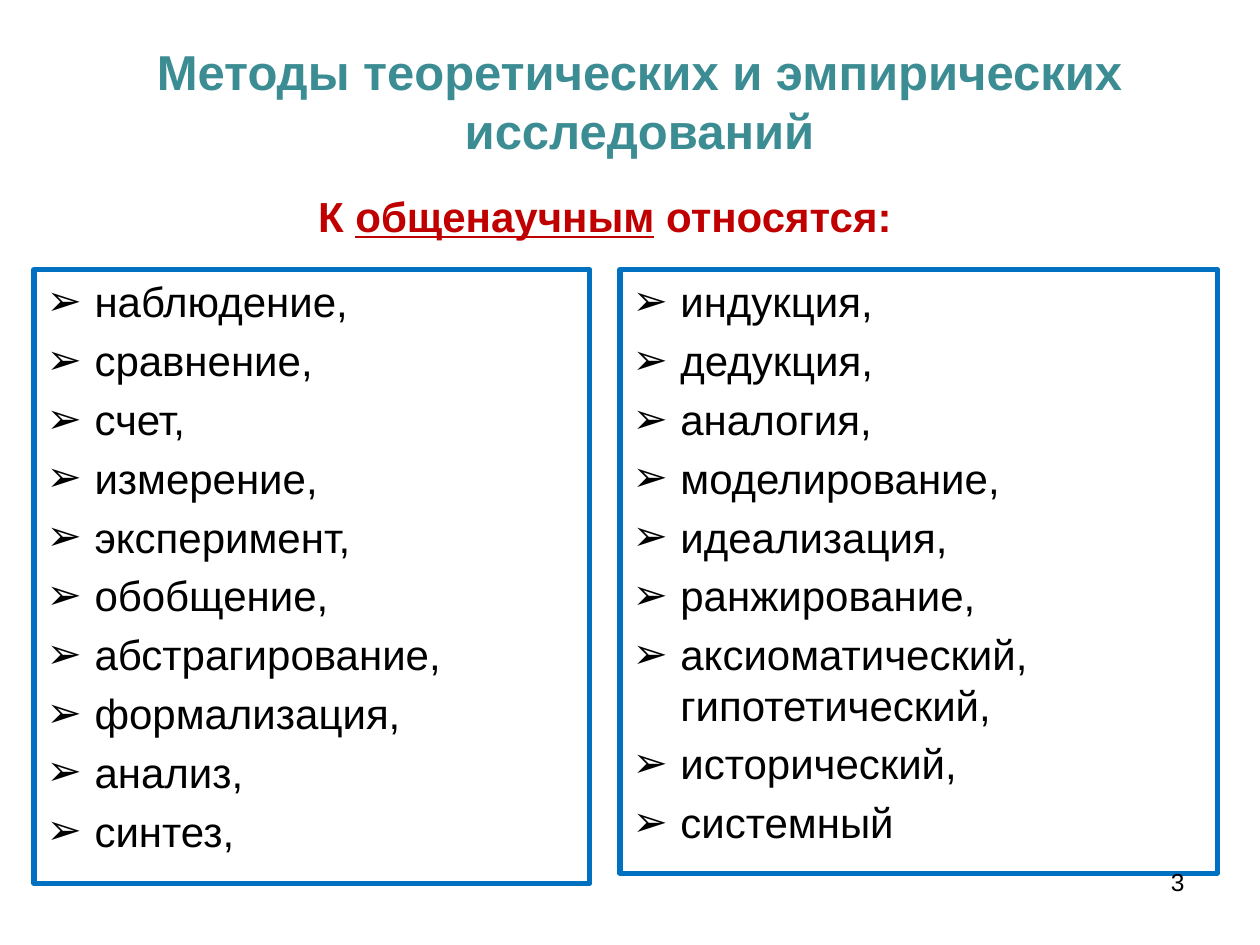
from lxml import etree
from pptx import Presentation
from pptx.dml.color import RGBColor
from pptx.enum.text import MSO_ANCHOR, MSO_AUTO_SIZE, PP_ALIGN
from pptx.oxml.ns import qn
from pptx.util import Inches, Pt

LEFT, CENTER, RIGHT = PP_ALIGN.LEFT, PP_ALIGN.CENTER, PP_ALIGN.RIGHT
TOP, MIDDLE = MSO_ANCHOR.TOP, MSO_ANCHOR.MIDDLE
NO_AUTOFIT = MSO_AUTO_SIZE.NONE

TEAL, RED, BLUE, BLACK = "3C8C93", "C00000", "0070C0", "000000"
TWO_CONTENT_LAYOUT = 3

OBSERVATION_METHODS = [
    "наблюдение,", "сравнение,", "счет,", "измерение,", "эксперимент,",
    "обобщение,", "абстрагирование,", "формализация,", "анализ,", "синтез,",
]
REASONING_METHODS = [
    "индукция,", "дедукция,", "аналогия,", "моделирование,", "идеализация,",
    "ранжирование,", "аксиоматический, гипотетический,", "исторический,",
    "системный",
]


def color(value):
    return RGBColor.from_string(value)


class MethodsSlide:
    font = "Arial"
    bullet = "➢"
    list_size = 24
    indent = Inches(0.38)

    def __init__(self, deck):
        self.slide = deck.slides.add_slide(deck.slide_layouts[TWO_CONTENT_LAYOUT])

    def place(self, holder, left, top, width, height):
        holder.left, holder.top = Inches(left), Inches(top)
        holder.width, holder.height = Inches(width), Inches(height)

    def prepare(self, frame, anchor):
        frame.word_wrap = True
        frame.auto_size = NO_AUTOFIT
        frame.vertical_anchor = anchor

    def add_run(self, paragraph, text, size, ink, bold=False, underline=False):
        run = paragraph.add_run()
        run.text = text
        run.font.name = self.font
        run.font.size = Pt(size)
        run.font.bold = bold
        run.font.underline = underline
        run.font.color.rgb = color(ink)

    def add_bullet(self, paragraph):
        properties = paragraph._p.get_or_add_pPr()
        properties.set("marL", str(self.indent))
        properties.set("indent", str(-self.indent))
        etree.SubElement(properties, qn("a:buFont"), typeface=self.font)
        etree.SubElement(properties, qn("a:buChar"), char=self.bullet)

    def title(self, text, box):
        heading = self.slide.shapes.title
        self.place(heading, *box)
        self.prepare(heading.text_frame, MIDDLE)
        paragraph = heading.text_frame.paragraphs[0]
        paragraph.alignment = CENTER
        self.add_run(paragraph, text, 28, TEAL, bold=True)

    def text(self, runs, box, size, ink, align, bold=False):
        frame = self.slide.shapes.add_textbox(*map(Inches, box)).text_frame
        self.prepare(frame, TOP)
        paragraph = frame.paragraphs[0]
        paragraph.alignment = align
        for words, underline in runs:
            self.add_run(paragraph, words, size, ink, bold, underline)

    def framed_list(self, index, methods, box):
        panel = self.slide.placeholders[index]
        self.place(panel, *box)
        panel.line.color.rgb = color(BLUE)
        panel.line.width = Pt(3)
        frame = panel.text_frame
        self.prepare(frame, TOP)
        for number, method in enumerate(methods):
            paragraph = frame.add_paragraph() if number else frame.paragraphs[0]
            paragraph.alignment = LEFT
            paragraph.space_before = Pt(self.list_size * 0.2)
            self.add_bullet(paragraph)
            self.add_run(paragraph, method, self.list_size, BLACK)


def main():
    deck = Presentation()
    deck.slide_width, deck.slide_height = Inches(10), Inches(7.5)
    page = MethodsSlide(deck)
    page.title("Методы теоретических и эмпирических исследований",
               (0.34, 0.28, 9.47, 1.04))
    page.text([("К ", False), ("общенаучным", True), (" относятся:", False)],
              (0.34, 1.46, 8.92, 0.51), 24, RED, CENTER, bold=True)
    page.framed_list(1, OBSERVATION_METHODS, (0.27, 2.14, 4.41, 4.87))
    page.framed_list(2, REASONING_METHODS, (4.92, 2.14, 4.74, 4.79))
    page.text([("3", False)], (7.17, 6.83, 2.33, 0.52), 14, BLACK, RIGHT)
    deck.save("out.pptx")


if __name__ == "__main__":
    main()
